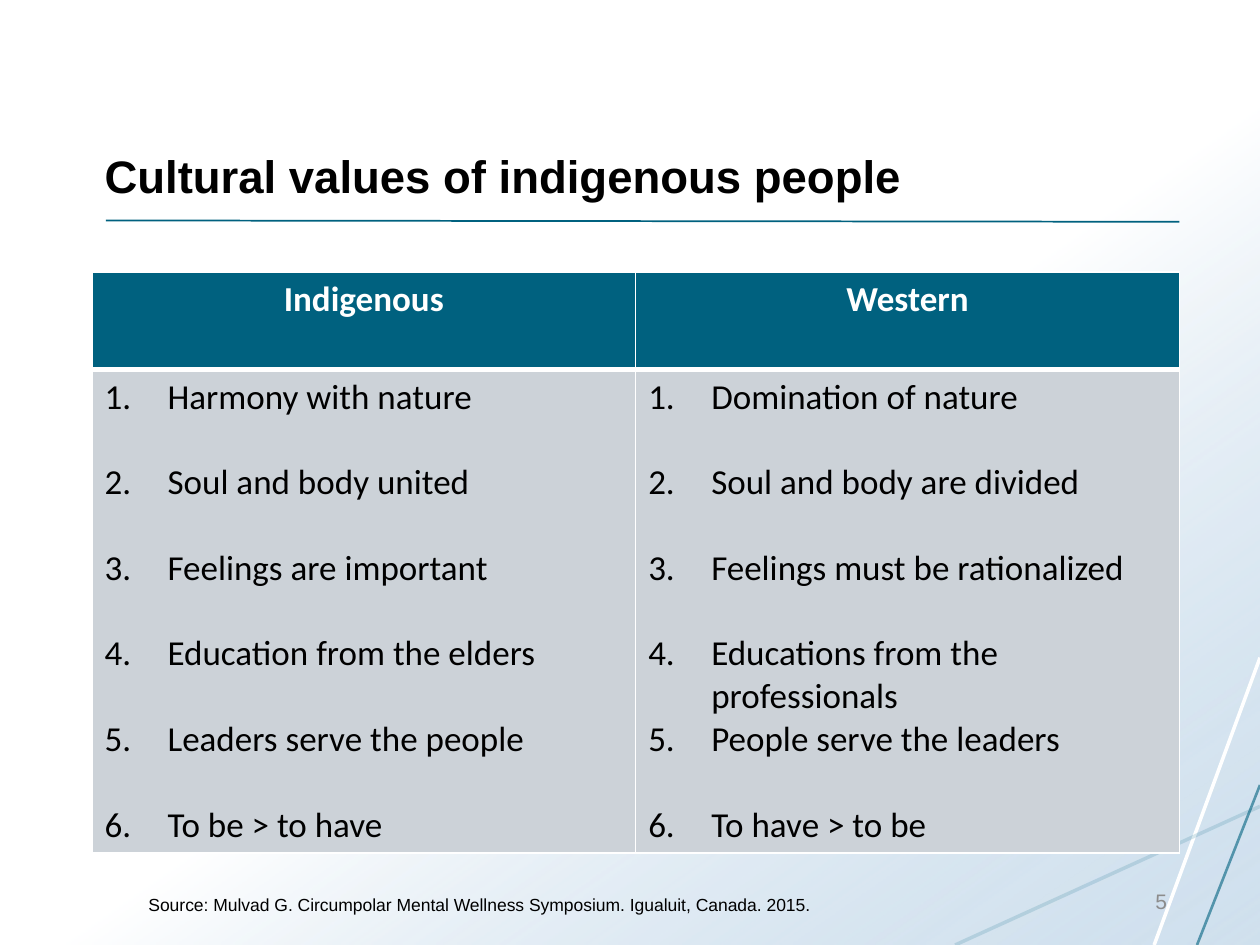
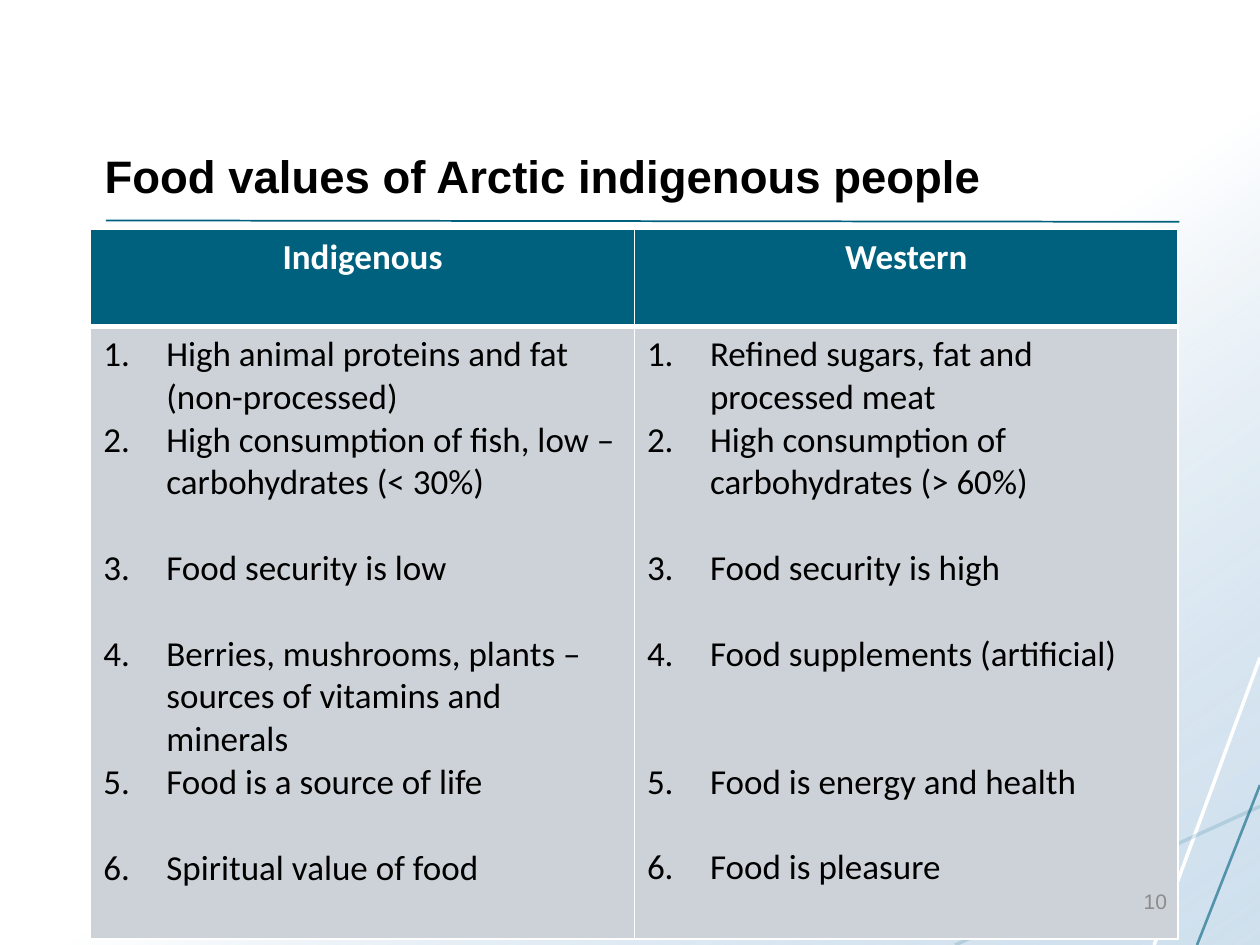
from dataclasses import dataclass
from typing import NamedTuple

import lxml.etree
import pptx
import pptx.dml.color
import pptx.enum.dml
import pptx.enum.shapes
import pptx.enum.text
import pptx.oxml.ns
import pptx.util

COLORS = {
    "white": "FFFFFF",
    "black": "000000",
    "teal": "00617F",
    "light_teal": "15718F",
    "sky": "A9C7E0",
    "cell": "CCD2D8",
    "number": "8C8C8C",
}
ALIGN = pptx.enum.text.PP_ALIGN
ANCHOR = pptx.enum.text.MSO_ANCHOR
WIDTH = pptx.util.Inches(10)
HEIGHT = pptx.util.Inches(7.5)
LINE_HEIGHT = 24.4  # points, one line of 20 pt Calibri
HEADER_HEIGHT = 10.3


class Frame(NamedTuple):
    """Left, top, width and height in percent of the slide."""
    left: float
    top: float
    width: float
    height: float


@dataclass(frozen=True)
class Stroke:
    """A line with its ends in percent of the slide."""
    start: tuple[float, float]
    end: tuple[float, float]
    color: str
    points: float
    opacity: int = 100


@dataclass(frozen=True)
class Item:
    text: str
    lines_before: int = 0


@dataclass(frozen=True)
class ValuesPage:
    title: str
    number: str
    table: Frame
    indigenous: list[Item]
    western: list[Item]
    source: str = ""


TITLE = Frame(7.3, 4.4, 86.2, 17.73)
NUMBER = Frame(71.7, 92.67, 21.9, 5.33)
SOURCE = Frame(10.8, 94, 59.7, 3.6)
STROKES = [
    Stroke((100, 69.6), (91.6, 100), "white", 2),
    Stroke((100, 85.33), (75.8, 100), "light_teal", 2, 16),
    Stroke((100, 83.07), (95, 100), "teal", 1.5, 60),
    Stroke((8.4, 23.33), (93.6, 23.47), "teal", 1),
]


def spaced(*texts: str) -> list[Item]:
    """List items with one empty line between neighbours."""
    return [Item(text, min(index, 1)) for index, text in enumerate(texts)]


PAGES = [
    ValuesPage(
        "Cultural values of indigenous people", "5",
        Frame(7.3, 28.8, 86.3, 61.4),
        spaced("Harmony with nature", "Soul and body united",
               "Feelings are important", "Education from the elders",
               "Leaders serve the people", "To be > to have"),
        spaced("Domination of nature", "Soul and body are divided",
               "Feelings must be rationalized")
        + [Item("Educations from the professionals", 1),
           Item("People serve the leaders"),
           Item("To have > to be", 1)],
        "Source: Mulvad G. Circumpolar Mental Wellness Symposium. "
        "Igualuit, Canada. 2015.",
    ),
    ValuesPage(
        "Food values of Arctic indigenous people", "10",
        Frame(7.2, 24.27, 86.3, 75.1),
        [Item("High animal proteins and fat (non-processed)"),
         Item("High consumption of fish, low – carbohydrates (< 30%)"),
         Item("Food security is low", 1),
         Item("Berries, mushrooms, plants – sources of vitamins and minerals", 1),
         Item("Food is a source of life"),
         Item("Spiritual value of food", 1)],
        [Item("Refined sugars, fat and processed meat"),
         Item("High consumption of carbohydrates (> 60%)"),
         Item("Food security is high", 1),
         Item("Food supplements (artificial)", 1),
         Item("Food is energy and health", 2),
         Item("Food is pleasure", 1)],
    ),
]


def across(percent: float) -> int:
    return round(WIDTH * percent / 100)


def down(percent: float) -> int:
    return round(HEIGHT * percent / 100)


def place(frame: Frame) -> tuple[int, int, int, int]:
    return (across(frame.left), down(frame.top),
            across(frame.width), down(frame.height))


def rgb(name: str) -> pptx.dml.color.RGBColor:
    return pptx.dml.color.RGBColor.from_string(COLORS[name])


def add_tag(parent, tag: str, **attributes: str):
    return lxml.etree.SubElement(parent, pptx.oxml.ns.qn(tag), attributes)


def set_opacity(element, percent: int) -> None:
    """Apply opacity to the last colour inside the element."""
    color = list(element.iter(pptx.oxml.ns.qn("a:srgbClr")))[-1]
    add_tag(color, "a:alpha", val=str(percent * 1000))


def style(para, size: float, color: str, font: str = "Arial",
          bold: bool = False, align=ALIGN.LEFT) -> None:
    para.alignment = align
    para.font.size = pptx.util.Pt(size)
    para.font.name = font
    para.font.bold = bold
    para.font.color.rgb = rgb(color)


def add_backdrop(shapes) -> list:
    """Draw the gradient and accent lines, and return their elements."""
    backdrop = shapes.add_shape(pptx.enum.shapes.MSO_SHAPE.RECTANGLE,
                                *place(Frame(0, 0, 100, 100)))
    backdrop.shadow.inherit = False
    backdrop.line.fill.background()
    backdrop.fill.gradient()
    backdrop.fill.gradient_angle = 360 - 55
    for stop, position, color in zip(backdrop.fill.gradient_stops,
                                     (0.54, 1), ("white", "sky")):
        stop.position = position
        stop.color.rgb = rgb(color)
    set_opacity(backdrop.element.spPr, 54)

    elements = [backdrop.element]
    for stroke in STROKES:
        line = shapes.add_connector(
            pptx.enum.shapes.MSO_CONNECTOR.STRAIGHT,
            across(stroke.start[0]), down(stroke.start[1]),
            across(stroke.end[0]), down(stroke.end[1]))
        line.line.color.rgb = rgb(stroke.color)
        line.line.width = pptx.util.Pt(stroke.points)
        if stroke.opacity < 100:
            set_opacity(line.element.spPr, stroke.opacity)
        add_tag(line.element.spPr, "a:effectLst")
        elements.append(line.element)
    return elements


def prepare_layout(layout) -> None:
    """Keep only the title placeholder and set its place."""
    title_type = pptx.enum.shapes.PP_PLACEHOLDER.TITLE
    for holder in list(layout.placeholders):
        if holder.placeholder_format.type == title_type:
            holder.left, holder.top, holder.width, holder.height = place(TITLE)
            holder.text_frame.vertical_anchor = ANCHOR.BOTTOM
        else:
            holder.element.getparent().remove(holder.element)


def move_to_layout(elements: list, layout) -> None:
    for index, element in enumerate(elements):
        layout.shapes.element.insert(2 + index, element)


def add_text(page, frame: Frame, text: str, size: float, color: str,
             align=ALIGN.LEFT, anchor=ANCHOR.TOP) -> None:
    box = page.shapes.add_textbox(*place(frame))
    box.text_frame.word_wrap = True
    box.text_frame.vertical_anchor = anchor
    para = box.text_frame.paragraphs[0]
    para.text = text
    style(para, size, color, align=align)


def format_cell(cell, fill: str, top: float, bottom: float) -> None:
    """Fill the cell and give it white borders, widths in points."""
    properties = cell._tc.get_or_add_tcPr()
    for side, points in {"L": 1, "R": 1, "T": top, "B": bottom}.items():
        border = add_tag(properties, f"a:ln{side}",
                         w=str(pptx.util.Pt(points)))
        solid = add_tag(border, "a:solidFill")
        add_tag(solid, "a:srgbClr", val=COLORS["white"])
    cell.fill.solid()
    cell.fill.fore_color.rgb = rgb(fill)


def fill_list(cell, items: list[Item]) -> None:
    frame = cell.text_frame
    for index, item in enumerate(items):
        para = frame.add_paragraph() if index else frame.paragraphs[0]
        para.text = item.text
        properties = para._p.get_or_add_pPr()
        indent = pptx.util.Inches(0.5)
        properties.set("marL", str(indent))
        properties.set("indent", str(-indent))
        add_tag(properties, "a:buFont", typeface="+mj-lt")
        add_tag(properties, "a:buAutoNum", type="arabicPeriod")
        if item.lines_before:
            para.space_before = pptx.util.Pt(LINE_HEIGHT * item.lines_before)
        style(para, 20, "black", "Calibri")


def add_values_table(page, content: ValuesPage) -> None:
    table = page.shapes.add_table(2, 2, *place(content.table)).table
    table.horz_banding = False
    table.rows[0].height = down(HEADER_HEIGHT)
    table.rows[1].height = down(content.table.height - HEADER_HEIGHT)
    columns = {"Indigenous": content.indigenous, "Western": content.western}
    for column, (heading, items) in enumerate(columns.items()):
        header, body = table.cell(0, column), table.cell(1, column)
        format_cell(header, "teal", top=1, bottom=3)
        format_cell(body, "cell", top=3, bottom=1)
        para = header.text_frame.paragraphs[0]
        para.text = heading
        style(para, 20, "white", "Calibri", True, ALIGN.CENTER)
        fill_list(body, items)


def add_page(page, content: ValuesPage) -> None:
    title = page.shapes.title.text_frame
    title.text = content.title
    title.auto_size = pptx.enum.text.MSO_AUTO_SIZE.NONE
    style(title.paragraphs[0], 26, "black", bold=True)
    add_values_table(page, content)
    add_text(page, NUMBER, content.number, 12, "number",
             ALIGN.RIGHT, ANCHOR.MIDDLE)
    if content.source:
        add_text(page, SOURCE, content.source, 10, "black")


def main() -> None:
    deck = pptx.Presentation()
    deck.slide_width, deck.slide_height = WIDTH, HEIGHT
    layout = deck.slide_layouts.get_by_name("Title Only")
    prepare_layout(layout)
    pages = [deck.slides.add_slide(layout) for _ in PAGES]

    # Shared backdrop, drawn once and kept on the layout
    move_to_layout(add_backdrop(pages[0].shapes), layout)

    for page, content in zip(pages, PAGES):
        add_page(page, content)
    deck.save("out.pptx")


if __name__ == "__main__":
    main()
